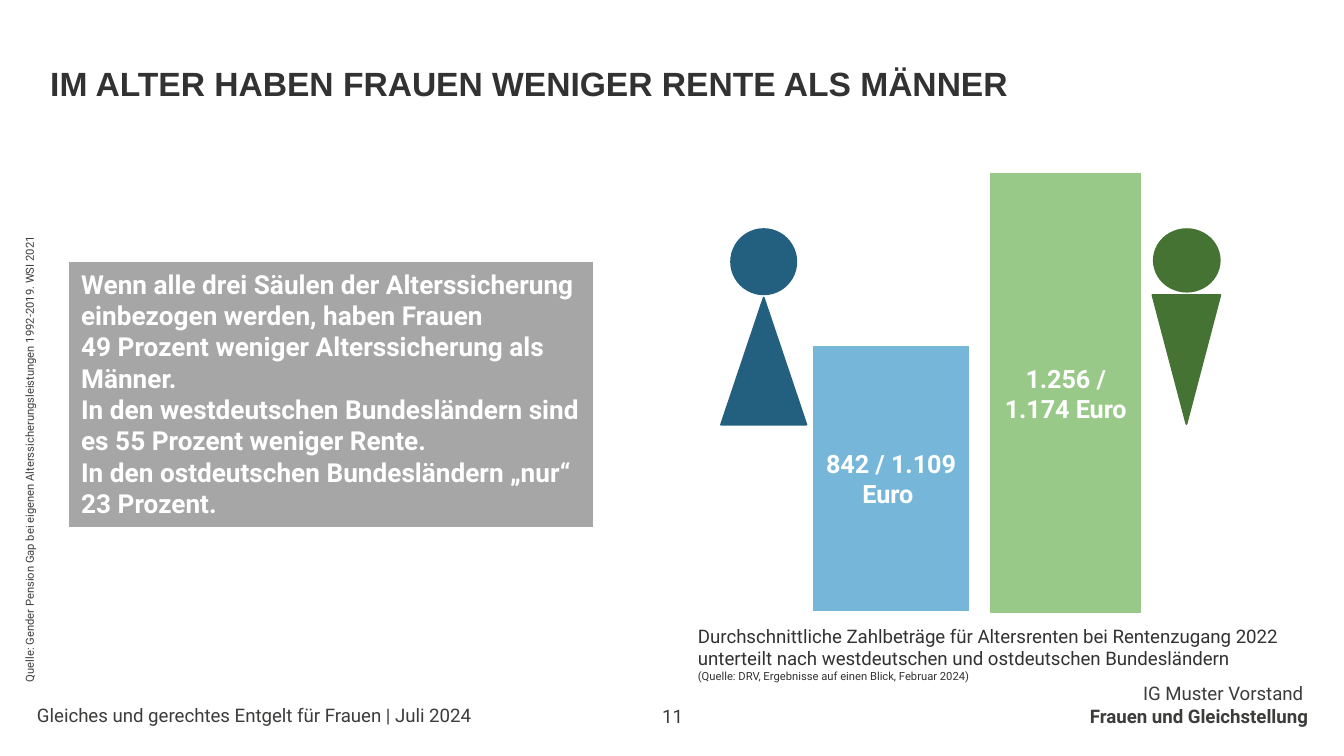
from pptx import Presentation
from pptx import util as u
from pptx.dml.color import RGBColor
from pptx.enum import shapes, text

PX = 4572  # EMU per px, 200 px to the inch

WHITE = RGBColor(0xFF, 0xFF, 0xFF)
INK = RGBColor(0x32, 0x32, 0x32)
FOOTER_INK = RGBColor(0x3C, 0x3C, 0x3B)
GREY = RGBColor(0xA6, 0xA6, 0xA6)
LIGHT_GREEN = RGBColor(0x99, 0xC9, 0x88)
DARK_GREEN = RGBColor(0x44, 0x73, 0x34)
LIGHT_BLUE = RGBColor(0x76, 0xB7, 0xD9)
DARK_BLUE = RGBColor(0x23, 0x60, 0x80)

KIND = shapes.MSO_SHAPE
TOP, MIDDLE, BOTTOM = (text.MSO_ANCHOR.TOP, text.MSO_ANCHOR.MIDDLE,
                       text.MSO_ANCHOR.BOTTOM)
LEFT, CENTER, RIGHT = text.PP_ALIGN.LEFT, text.PP_ALIGN.CENTER, text.PP_ALIGN.RIGHT


def add_paragraph(frame, content, size=10, color=FOOTER_INK, bold=False,
                  font="Roboto", align=LEFT, spacing=None):
    """Fill the frame's empty first paragraph, or append a new one."""
    first = frame.paragraphs[0]
    paragraph = frame.add_paragraph() if first.runs else first
    paragraph.alignment = align
    if spacing:
        paragraph.line_spacing = spacing
    run = paragraph.add_run()
    run.text = content
    run.font.name = font
    run.font.size = u.Pt(size)
    run.font.bold = bold
    run.font.color.rgb = color


class Board:
    def __init__(self, slide):
        self.shapes = slide.shapes

    def prepare(self, frame, anchor, inset=True):
        frame.word_wrap = True
        frame.vertical_anchor = anchor
        if not inset:
            frame.margin_left = frame.margin_right = 0
            frame.margin_top = frame.margin_bottom = 0
        return frame

    def label(self, box, *lines, anchor=TOP, inset=True, rotation=0, **style):
        """Each line is a string, or a pair of string and its own format."""
        holder = self.shapes.add_textbox(*(v * PX for v in box))
        holder.rotation = rotation
        frame = self.prepare(holder.text_frame, anchor, inset)
        for line in lines:
            content, own = (line, {}) if isinstance(line, str) else line
            add_paragraph(frame, content, **{**style, **own})

    def shape(self, kind, box, fill, line, width=1, rotation=0):
        item = self.shapes.add_shape(kind, *(v * PX for v in box))
        item.shadow.inherit = False
        item.rotation = rotation
        item.fill.solid()
        item.fill.fore_color.rgb = fill
        item.line.color.rgb = line
        item.line.width = u.Pt(width)
        return item

    def panel(self, box, fill, *lines, anchor=MIDDLE, width=1, **style):
        item = self.shape(KIND.RECTANGLE, box, fill, WHITE, width)
        frame = self.prepare(item.text_frame, anchor)
        for line in lines:
            add_paragraph(frame, line, color=WHITE, bold=True, **style)

    def person(self, head, body, color, rotation=0):
        self.shape(KIND.OVAL, head, color, color)
        self.shape(KIND.ISOSCELES_TRIANGLE, body, color, color, rotation=rotation)


def main():
    deck = Presentation()
    deck.slide_width, deck.slide_height = 2000 * PX, 1125 * PX
    board = Board(deck.slides.add_slide(deck.slide_layouts[6]))

    board.label((55, 1047, 778, 34),
                "Gleiches und gerechtes Entgelt für Frauen | Juli 2024",
                anchor=BOTTOM, inset=False)
    board.label((1338, 1015, 608, 68), "IG Muster Vorstand ",
                ("Frauen und Gleichstellung", {"bold": True}),
                inset=False, align=RIGHT)
    board.label((904, 1023, 194, 60), "11", anchor=BOTTOM, inset=False,
                align=CENTER, spacing=0.9)

    board.label((55, 84, 1716, 80),
                "IM ALTER HABEN FRAUEN WENIGER RENTE ALS MÄNNER",
                size=18, color=INK, bold=True, font="Arial")
    board.panel((101, 389, 782, 397), GREY,
                "Wenn alle drei Säulen der Alterssicherung einbezogen werden, "
                "haben Frauen",
                "49 Prozent weniger Alterssicherung als Männer.",
                "In den westdeutschen Bundesländern sind es 55 Prozent "
                "weniger Rente.",
                "In den ostdeutschen Bundesländern „nur“ 23 Prozent.",
                anchor=TOP, width=0.75, size=14)
    board.label((-286, 637, 700, 56),
                "Quelle: Gender Pension Gap bei eigenen "
                "Alterssicherungsleistungen 1992-2019. WSI 2021",
                inset=False, rotation=270, size=6, spacing=0.9)

    board.panel((1472, 256, 228, 658), LIGHT_GREEN, "1.256 / 1.174 Euro ",
                size=13.5, align=CENTER)
    board.person((1717, 341, 98, 93), (1715, 439, 101, 192), DARK_GREEN,
                 rotation=180)
    board.panel((1209, 514, 234, 397), LIGHT_BLUE, "842 / 1.109 Euro ",
                size=13.5, align=CENTER)
    board.person((1088, 341, 97, 97), (1073, 443, 127, 189), DARK_BLUE)
    board.label((1019, 920, 906, 108),
                "Durchschnittliche Zahlbeträge für Altersrenten bei "
                "Rentenzugang 2022 unterteilt nach westdeutschen und "
                "ostdeutschen Bundesländern",
                ("(Quelle: DRV, Ergebnisse auf einen Blick, Februar 2024)",
                 {"size": 6}),
                color=INK)

    deck.save("out.pptx")


if __name__ == "__main__":
    main()
